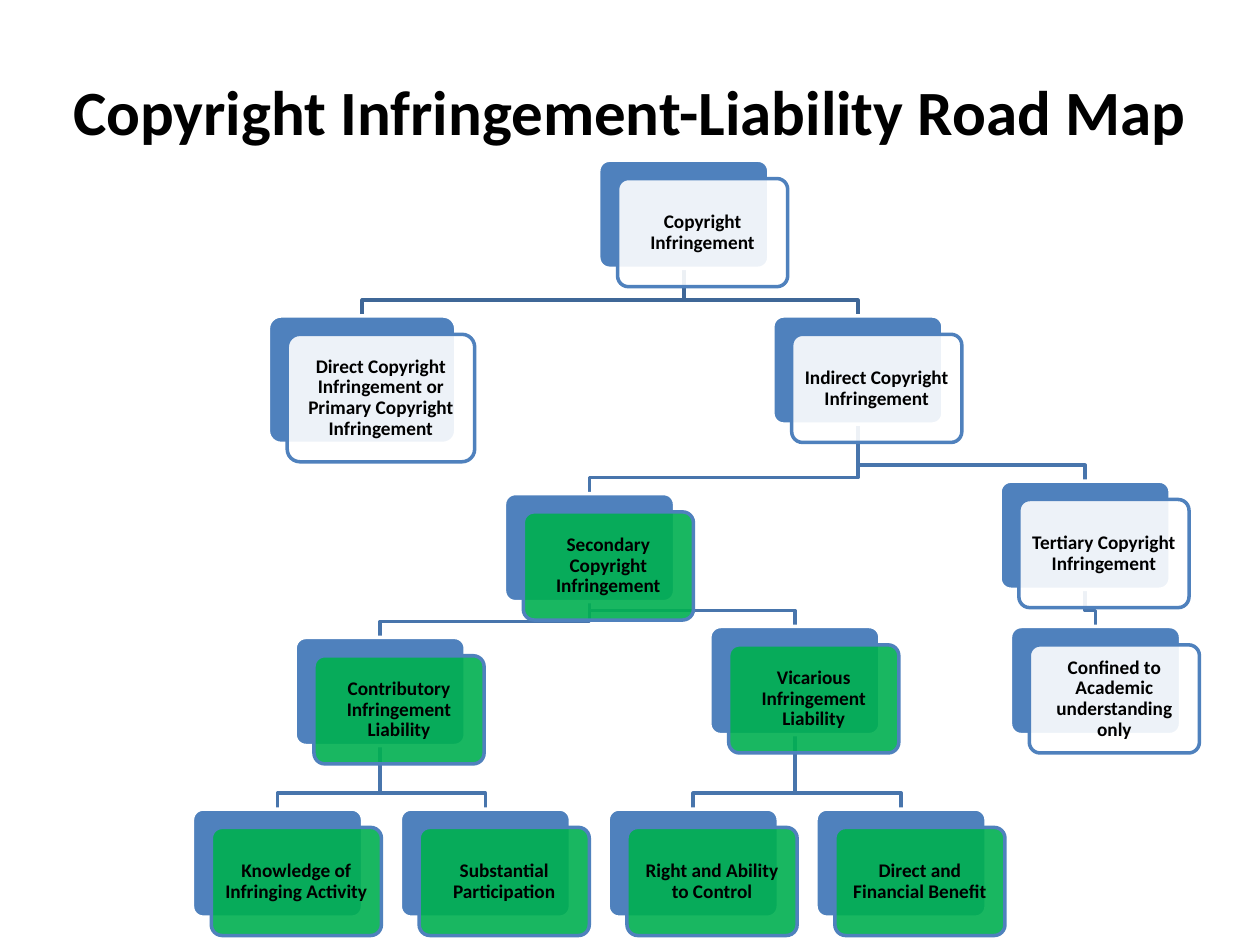
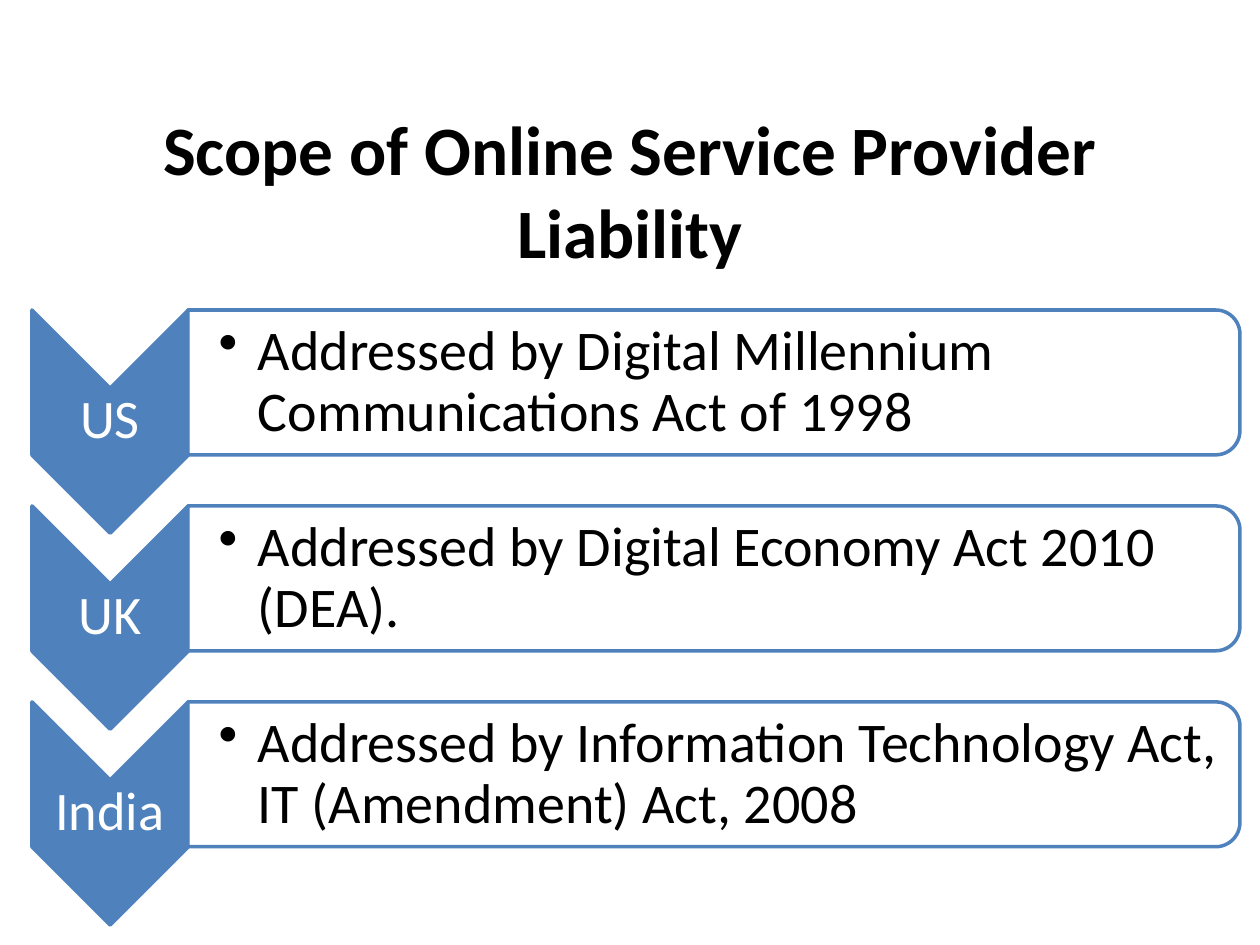
"""Build two slides: a copyright liability tree and the scope of provider liability."""
from lxml import etree
from pptx import Presentation
from pptx.dml.color import RGBColor
from pptx.enum.shapes import MSO_SHAPE
from pptx.enum.text import MSO_ANCHOR, PP_ALIGN
from pptx.oxml.ns import qn
from pptx.util import Cm, Pt

ROUNDED = MSO_SHAPE.ROUNDED_RECTANGLE
CHEVRON = MSO_SHAPE.CHEVRON
ROUNDED_TOP = MSO_SHAPE.ROUND_2_SAME_RECTANGLE
MIDDLE = MSO_ANCHOR.MIDDLE
CENTER = PP_ALIGN.CENTER
LEFT = PP_ALIGN.LEFT

COLORS = {
    "blue": "4F81BD",
    "green": "00B050",
    "white": "FFFFFF",
    "black": "000000",
    "root link": "3F6797",
    "link": "4875AC",
}
FONT = "Calibri"
LINE_WIDTH = Pt(2)


def paint(shape, fill, line, opacity=100):
    """Give a shape a flat fill and a line, without shadow."""
    shape.shadow.inherit = False
    shape.fill.solid()
    shape.fill.fore_color.rgb = RGBColor.from_string(COLORS[fill])
    if opacity < 100:
        color = shape.fill._xPr.find(qn("a:solidFill"))[0]
        etree.SubElement(color, qn("a:alpha"), val=str(opacity * 1000))
    shape.line.color.rgb = RGBColor.from_string(COLORS[line])
    shape.line.width = LINE_WIDTH


def write(shape, text, size, color="black", bold=False, align=CENTER,
          inset=0.05, left_inset=None, spacing=0.9):
    """Put one formatted paragraph into a shape and return it."""
    frame = shape.text_frame
    frame.word_wrap = True
    frame.vertical_anchor = MIDDLE
    frame.margin_right = frame.margin_top = frame.margin_bottom = Cm(inset)
    frame.margin_left = Cm(inset if left_inset is None else left_inset)
    paragraph = frame.paragraphs[0]
    paragraph.text = text
    paragraph.alignment = align
    paragraph.line_spacing = spacing
    paragraph.font.name = FONT
    paragraph.font.size = Pt(size)
    paragraph.font.bold = bold
    paragraph.font.color.rgb = RGBColor.from_string(COLORS[color])
    return paragraph


presentation = Presentation()
presentation.slide_width = Cm(25.4)
presentation.slide_height = Cm(19.05)
blank_layout = presentation.slide_layouts[6]

titles = [
    ("Copyright Infringement-Liability Road Map", 36, (-0.43, 1.27, 26.24, 1.9)),
    ("Scope of Online Service Provider Liability", 39.6, (1.27, 2.34, 22.86, 2.97)),
]
for text, size, box in titles:
    slide = presentation.slides.add_slide(blank_layout)
    title = slide.shapes.add_textbox(*map(Cm, box))
    write(title, text, size, bold=True, inset=0.25, spacing=1.0)
tree_slide, scope_slide = presentation.slides

CARD = (3.43, 2.18)
WIDE_CARD = (3.78, 2.57)
CARD_SHIFT = (0.38, 0.37)
JOINT_RISE = 0.32
LEAF_LEFT, LEAF_STEP, LEAF_TOP = 3.88, 4.19, 16.31

nodes = {
    "root": ("Copyright Infringement", None, 12.07, 3.23, CARD, "white"),
    "direct": ("Direct Copyright Infringement or Primary Copyright Infringement",
               "root", 5.41, 6.37, WIDE_CARD, "white"),
    "indirect": ("Indirect Copyright Infringement", "root", 15.58, 6.37, CARD, "white"),
    "secondary": ("Secondary Copyright Infringement",
                  "indirect", 10.17, 9.95, CARD, "green"),
    "contributory": ("Contributory Infringement Liability",
                     "secondary", 5.95, 12.85, CARD, "green"),
    "vicarious": ("Vicarious Infringement Liability",
                  "secondary", 14.31, 12.63, CARD, "green"),
    "tertiary": ("Tertiary Copyright Infringement", "indirect", 20.16, 9.7, CARD, "white"),
    "academic": ("Confined to Academic understanding only",
                 "tertiary", 20.37, 12.63, CARD, "white"),
}
leaves = [
    ("Knowledge of Infringing Activity", "contributory"),
    ("Substantial Participation", "contributory"),
    ("Right and Ability to Control", "vicarious"),
    ("Direct and Financial Benefit", "vicarious"),
]
for index, (text, parent) in enumerate(leaves):
    left = LEAF_LEFT + index * LEAF_STEP
    nodes[text] = (text, parent, left, LEAF_TOP, CARD, "green")

for text, parent, left, top, (width, height), fill in nodes.values():
    if parent is None:
        continue
    _, _, parent_left, parent_top, (parent_width, parent_height), _ = nodes[parent]
    start_x, end_x = Cm(parent_left + parent_width / 2), Cm(left + width / 2)
    joint_y = Cm(top - JOINT_RISE)
    builder = tree_slide.shapes.build_freeform(start_x, Cm(parent_top + parent_height))
    builder.add_line_segments(
        [(start_x, joint_y), (end_x, joint_y), (end_x, Cm(top))], close=False)
    link = builder.convert_to_shape()
    paint(link, "white", "root link" if parent == "root" else "link")
    link.fill.background()

for text, parent, left, top, (width, height), fill in nodes.values():
    back = tree_slide.shapes.add_shape(ROUNDED, Cm(left), Cm(top), Cm(width), Cm(height))
    paint(back, "blue", "white")
    front = tree_slide.shapes.add_shape(
        ROUNDED, Cm(left + CARD_SHIFT[0]), Cm(top + CARD_SHIFT[1]), Cm(width), Cm(height))
    paint(front, fill, "blue", opacity=90)
    for card in (back, front):
        card.adjustments[0] = 0.1
    write(front, text, 11, bold=True, inset=0.19)

ROW_TOP, ROW_STEP = 6.25, 3.95
CHEVRON_CENTER, CHEVRON_LENGTH, CHEVRON_BREADTH = 2.22, 4.5, 3.15
PANEL_CENTER, PANEL_LENGTH, PANEL_BREADTH = 14.39, 21.21, 2.92
BULLET_INDENT = Cm(0.79)

scopes = [
    ("US", "Addressed by Digital Millennium Communications Act of 1998"),
    ("UK", "Addressed by Digital Economy Act 2010 (DEA)."),
    ("India", "Addressed by Information Technology Act, IT (Amendment) Act, 2008"),
]
for index, (country, law) in enumerate(scopes):
    top = ROW_TOP + index * ROW_STEP
    turned_shapes = [
        (CHEVRON, CHEVRON_CENTER, CHEVRON_LENGTH, CHEVRON_BREADTH, "blue", 100),
        (ROUNDED_TOP, PANEL_CENTER, PANEL_BREADTH, PANEL_LENGTH, "white", 90),
    ]
    for kind, center, width, height, fill, opacity in turned_shapes:
        shape = scope_slide.shapes.add_shape(
            kind, Cm(center - width / 2), Cm(top + width / 2 - height / 2),
            Cm(width), Cm(height))
        shape.rotation = 90
        paint(shape, fill, "blue", opacity)

    label = scope_slide.shapes.add_textbox(
        Cm(0.64), Cm(top + 1.57), Cm(CHEVRON_BREADTH), Cm(1.35))
    write(label, country, 31, color="white")

    description = scope_slide.shapes.add_textbox(
        Cm(3.78), Cm(top + 0.15), Cm(21.06), Cm(2.64))
    paragraph = write(description, law, 32, align=LEFT, left_inset=0.63)
    properties = paragraph._p.get_or_add_pPr()
    properties.set("marL", str(BULLET_INDENT))
    properties.set("indent", str(-BULLET_INDENT))
    bullet = etree.Element(qn("a:buChar"), char="•")
    properties.find(qn("a:defRPr")).addprevious(bullet)

presentation.save("out.pptx")
